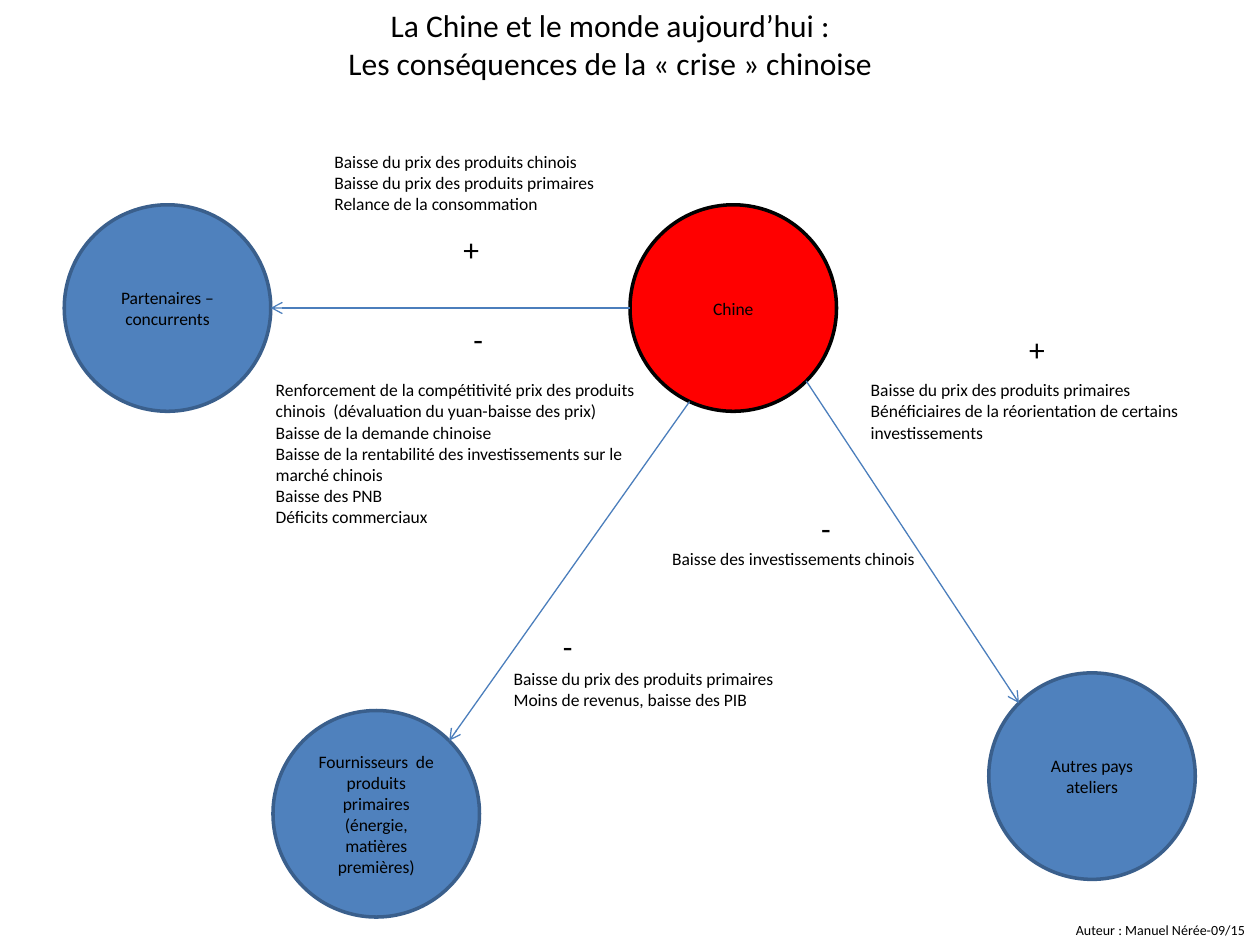
from math import cos, radians, sin

from lxml import etree
from pptx import Presentation
from pptx.dml.color import RGBColor
from pptx.enum.shapes import MSO_CONNECTOR, MSO_SHAPE
from pptx.enum.text import MSO_ANCHOR, MSO_AUTO_SIZE, PP_ALIGN
from pptx.oxml.ns import qn
from pptx.util import Pt

OVAL = MSO_SHAPE.OVAL
STRAIGHT = MSO_CONNECTOR.STRAIGHT
MIDDLE = MSO_ANCHOR.MIDDLE
GROW = MSO_AUTO_SIZE.SHAPE_TO_FIT_TEXT
LEFT, CENTER = PP_ALIGN.LEFT, PP_ALIGN.CENTER

FONT = "Calibri"
BLACK, RED, BLUE, NAVY, ARROW = "000000", "FF0000", "4F81BD", "3A5F8C", "4B7EBC"
SIZE = 118  # diameter of every circle

TITLE = ["La Chine et le monde aujourd’hui :",
         "Les conséquences de la « crise » chinoise"]
AUTHOR = ["Auteur : Manuel Nérée-09/15"]

# name: (left, top, fill, line, text)
ACTORS = {
    "china": (360, 117, RED, BLACK, "Chine"),
    "rivals": (36.7, 117, BLUE, NAVY, "Partenaires –concurrents"),
    "sellers": (156, 406, BLUE, NAVY,
                "Fournisseurs  de produits primaires (énergie, matières premières)"),
    "makers": (565, 384.5, BLUE, NAVY, "Autres pays ateliers"),
}

# start, its angle, end, its angle (degrees, clockwise from the right)
LINKS = [
    ("china", 45, "makers", 225),
    ("china", 180, "rivals", 0),
    ("china", 115, "sellers", 315),
]

# left, top, width, height, wrap, lines
EFFECTS = [
    (184, 83, 165, 55, False, [
        "Baisse du prix des produits chinois",
        "Baisse du prix des produits primaires",
        "Relance de la consommation"]),
    (286.4, 378, 167, 31.5, False, [
        "Baisse du prix des produits primaires",
        "Moins de revenus, baisse des PIB"]),
    (490.5, 213.3, 199, 55, True, [
        "Baisse du prix des produits primaires",
        "Bénéficiaires de la réorientation de certains",
        "investissements"]),
    (150.5, 213.3, 221, 92, True, [
        "Renforcement de la compétitivité prix des produits chinois  "
        "(dévaluation du yuan-baisse des prix)",
        "Baisse de la demande chinoise",
        "Baisse de la rentabilité des investissements sur le marché chinois",
        "Baisse des PNB",
        "Déficits commerciaux"]),
    (377, 309.8, 158, 31.5, False, ["Baisse des investissements chinois"]),
]

# sign, left, top
SIGNS = [("+", 581, 185), ("+", 257.7, 128), ("-", 462.2, 287.3),
         ("-", 314.6, 355), ("-", 263.5, 179.3)]
WIDTHS = {"+": 24, "-": 20}


def color(code):
    return RGBColor.from_string(code)


def write(frame, lines, size=10, align=LEFT, wrap=True):
    frame.word_wrap = wrap
    for i, line in enumerate(lines):
        para = frame.paragraphs[0] if i == 0 else frame.add_paragraph()
        para.alignment = align
        run = para.add_run()
        run.text = line
        run.font.name = FONT
        run.font.size = Pt(size)
        run.font.color.rgb = color(BLACK)


def label(slide, left, top, width, height, lines, **style):
    box = slide.shapes.add_textbox(Pt(left), Pt(top), Pt(width), Pt(height))
    write(box.text_frame, lines, **style)
    box.text_frame.auto_size = GROW


def circle(slide, left, top, fill, line, text):
    oval = slide.shapes.add_shape(OVAL, Pt(left), Pt(top), Pt(SIZE), Pt(SIZE))
    oval.shadow.inherit = False
    oval.fill.solid()
    oval.fill.fore_color.rgb = color(fill)
    oval.line.color.rgb = color(line)
    oval.line.width = Pt(2)
    oval.text_frame.vertical_anchor = MIDDLE
    write(oval.text_frame, [text], align=CENTER)


def rim(name, angle):
    """Return the point of an actor's circle at the given angle."""
    left, top = ACTORS[name][:2]
    half, turn = SIZE / 2, radians(angle)
    return Pt(left + half + half * cos(turn)), Pt(top + half + half * sin(turn))


def arrow(slide, start, out, end, into):
    link = slide.shapes.add_connector(STRAIGHT, *rim(start, out), *rim(end, into))
    link.line.color.rgb = color(ARROW)
    link.line.width = Pt(0.75)
    etree.SubElement(link.line._get_or_add_ln(), qn("a:tailEnd"), type="arrow")
    etree.SubElement(link._element.spPr, qn("a:effectLst"))


def main():
    deck = Presentation()
    deck.slide_width, deck.slide_height = Pt(720), Pt(540)
    slide = deck.slides.add_slide(deck.slide_layouts[6])

    for actor in ACTORS.values():
        circle(slide, *actor)
    for *place, wrap, lines in EFFECTS:
        label(slide, *place, lines, wrap=wrap)
    for link in LINKS:
        arrow(slide, *link)
    label(slide, 190, 0, 317.5, 51, TITLE, size=18, align=CENTER, wrap=False)
    label(slide, 607.7, 523, 112.3, 17, AUTHOR, size=8, wrap=False)
    for sign, left, top in SIGNS:
        label(slide, left, top, WIDTHS[sign], 29, [sign], size=18, wrap=False)

    deck.save("out.pptx")


if __name__ == "__main__":
    main()
